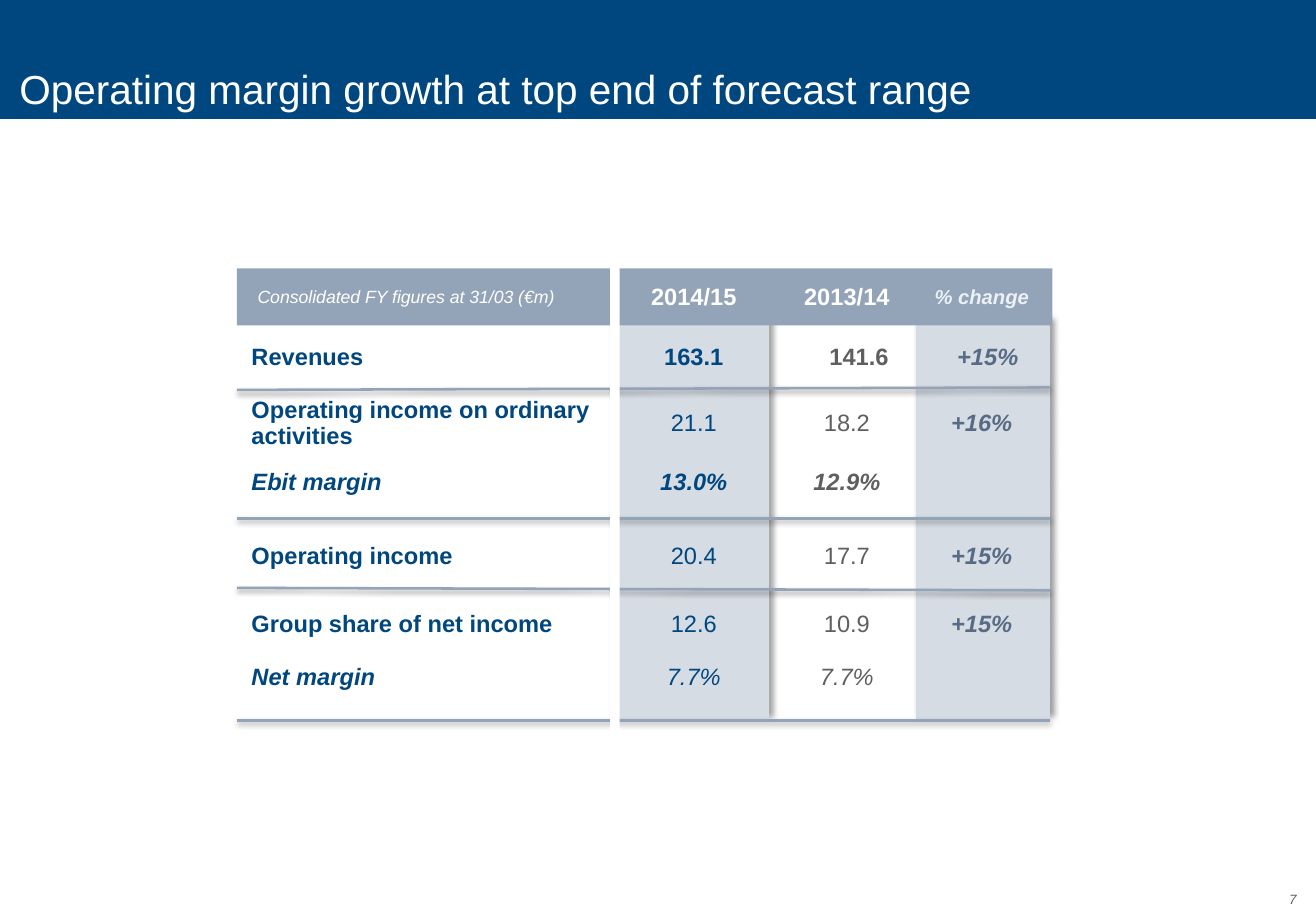
from lxml import etree
from pptx import Presentation
from pptx.dml.color import RGBColor
from pptx.enum.shapes import MSO_CONNECTOR, MSO_SHAPE
from pptx.enum.text import MSO_ANCHOR, PP_ALIGN
from pptx.oxml.ns import qn
from pptx.util import Inches, Pt

RECTANGLE = MSO_SHAPE.RECTANGLE
STRAIGHT = MSO_CONNECTOR.STRAIGHT
TOP, MIDDLE, BOTTOM = MSO_ANCHOR.TOP, MSO_ANCHOR.MIDDLE, MSO_ANCHOR.BOTTOM
LEFT, CENTER, RIGHT = PP_ALIGN.LEFT, PP_ALIGN.CENTER, PP_ALIGN.RIGHT

FONT = "Arial"
NO_GRID_STYLE = "{2D5ABB26-0587-4C30-8999-92F81FD0307C}"
COLORS = {
    "navy": "00477F",
    "slate": "93A3B8",
    "band": "D6DCE4",
    "grey": "5F5F5F",
    "change": "586B85",
    "pale": "EBF1F7",
    "white": "FFFFFF",
    "black": "000000",
}

TABLE_LEFT, TABLE_TOP, TABLE_RIGHT = 1.95, 2.21, 8.64
COLUMN_WIDTHS = [3.14, 1.24, 1.28, 0.94]
ROW_HEIGHTS = [0.47, 0.53, 0.55, 0.42, 0.8, 0.32, 0.56]
COLUMN_COLORS = ["navy", "navy", "grey", "change"]
HEADER_COLORS = ["white", "white", "white", "pale"]
HEADER_SIZES = [10.5, 14, 14, 12]

# Text of each row and the style of each cell: b bold, i italic
ROWS = [
    (["Consolidated FY figures at 31/03 (€m)", "2014/15", "2013/14", "% change"],
     ["i", "b", "b", "bi"]),
    (["Revenues", "163.1", "141.6", "+15%"], ["b", "b", "b", "bi"]),
    (["Operating income on ordinary activities", "21.1", "18.2", "+16%"],
     ["b", "", "", "bi"]),
    (["Ebit margin", "13.0%", "12.9%", ""], ["bi", "bi", "bi", ""]),
    (["Operating income", "20.4", "17.7", "+15%"], ["b", "", "", "bi"]),
    (["Group share of net income", "12.6", "10.9", "+15%"], ["b", "", "", "bi"]),
    (["Net margin", "7.7%", "7.7%", ""], ["bi", "i", "i", ""]),
]
# Left insets of cells that sit off the usual position
CELL_INSETS = {(0, 0): 0.17, (1, 2): 0.2, (1, 3): 0.1}

# Heights of each rule at its left and right end
RULES = [(3.21, 3.19), (4.27, 4.27), (4.84, 4.86), (5.93, 5.93)]


def rgb(name):
    return RGBColor.from_string(COLORS[name])


def set_shadow(element, alpha=0, blur=0, distance=0, angle=0):
    """Give a shape or connector an outer shadow, or none when alpha is 0."""
    properties = element.spPr
    for effects in properties.findall(qn("a:effectLst")):
        properties.remove(effects)
    effects = etree.SubElement(properties, qn("a:effectLst"))
    if alpha:
        shadow = etree.SubElement(
            effects, qn("a:outerShdw"), blurRad=str(Pt(blur)), dist=str(Pt(distance)),
            dir=str(angle * 60000), algn="tl", rotWithShape="0")
        color = etree.SubElement(shadow, qn("a:srgbClr"), val=COLORS["black"])
        etree.SubElement(color, qn("a:alpha"), val=str(alpha * 1000))


def add_block(slide, left, top, width, height, color):
    block = slide.shapes.add_shape(
        RECTANGLE, Inches(left), Inches(top), Inches(width), Inches(height))
    block.shadow.inherit = False
    block.fill.solid()
    block.fill.fore_color.rgb = rgb(color)
    block.line.fill.background()
    return block


def add_rule(slide, start_y, end_y):
    rule = slide.shapes.add_connector(
        STRAIGHT, Inches(TABLE_LEFT), Inches(start_y), Inches(TABLE_RIGHT), Inches(end_y))
    rule.line.color.rgb = rgb("slate")
    rule.line.width = Pt(1.5)
    set_shadow(rule._element, alpha=38, blur=3.1, distance=1.6, angle=90)


def write_text(frame, text, size, color, style="", align=LEFT):
    paragraph = frame.paragraphs[0]
    paragraph.alignment = align
    run = paragraph.add_run()
    run.text = text
    run.font.name = FONT
    run.font.size = Pt(size)
    run.font.color.rgb = rgb(color)
    run.font.bold = "b" in style
    run.font.italic = "i" in style


def add_label(slide, left, top, width, height, text, size, color,
              style="", align=LEFT, anchor=TOP, inset=0.1):
    label = slide.shapes.add_textbox(
        Inches(left), Inches(top), Inches(width), Inches(height))
    frame = label.text_frame
    frame.word_wrap = True
    frame.vertical_anchor = anchor
    frame.margin_left = Inches(inset)
    write_text(frame, text, size, color, style, align)


def add_results_table(slide):
    holder = slide.shapes.add_table(
        len(ROWS), len(COLUMN_WIDTHS), Inches(TABLE_LEFT), Inches(TABLE_TOP),
        Inches(sum(COLUMN_WIDTHS)), Inches(sum(ROW_HEIGHTS)))
    results = holder.table
    results.horz_banding = False
    for style_id in holder._element.iter(qn("a:tableStyleId")):
        style_id.text = NO_GRID_STYLE
    for column, width in zip(results.columns, COLUMN_WIDTHS):
        column.width = Inches(width)
    for row, height in zip(results.rows, ROW_HEIGHTS):
        row.height = Inches(height)

    for r, (texts, styles) in enumerate(ROWS):
        for c, (text, style) in enumerate(zip(texts, styles)):
            cell = results.cell(r, c)
            cell.fill.background()
            cell.vertical_anchor = MIDDLE
            cell.margin_top = cell.margin_bottom = cell.margin_right = 0
            cell.margin_left = Inches(CELL_INSETS.get((r, c), 0.12 if c == 0 else 0))
            size = HEADER_SIZES[c] if r == 0 else 14
            color = HEADER_COLORS[c] if r == 0 else COLUMN_COLORS[c]
            write_text(cell.text_frame, text, size, color, style,
                       LEFT if c == 0 else CENTER)


def main():
    deck = Presentation()
    deck.slide_width, deck.slide_height = Inches(10.83), Inches(7.5)
    slide = deck.slides.add_slide(deck.slide_layouts[6])

    # Title band and page number
    add_block(slide, -0.01, -0.03, 10.85, 1.01, "navy")
    add_label(slide, 0, -0.03, 10.5, 1.01,
              "Operating margin growth at top end of forecast range",
              24, "white", anchor=BOTTOM, inset=0.16)
    add_label(slide, 10.14, 7.29, 0.63, 0.22, "7", 8, "grey", "i", RIGHT)

    # Shaded columns and header band
    for left, width in [(7.54, 1.1), (5.03, 1.3)]:
        column_band = add_block(slide, left, 2.66, width, 3.27, "band")
        set_shadow(column_band._element, alpha=40, blur=4, distance=3, angle=315)
    add_block(slide, TABLE_LEFT, TABLE_TOP, 6.71, 0.47, "slate")

    # Rules, with a white gap between labels and figures
    for start_y, end_y in RULES:
        add_rule(slide, start_y, end_y)
    add_block(slide, 5.02, 2.19, 0.08, 3.82, "white")

    # Results
    add_results_table(slide)

    deck.save("out.pptx")


if __name__ == "__main__":
    main()
